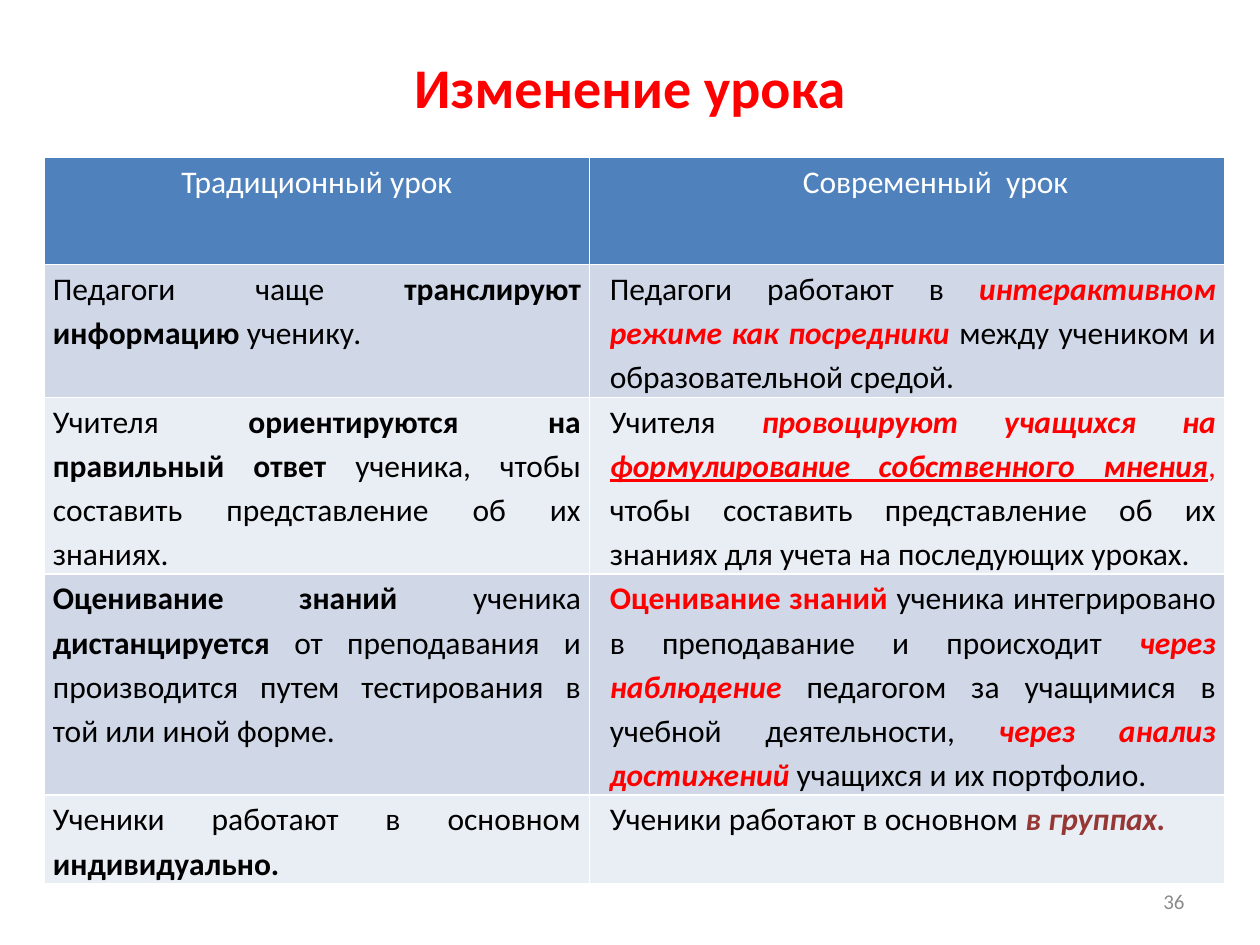
"""Builds a slide with a table comparing traditional and modern lessons."""
from dataclasses import dataclass

from pptx import Presentation
from pptx import util as u
from pptx.dml.color import RGBColor
from pptx.enum import text as t

HUES = {"red": "FF0000", "brown": "953735", "black": "000000", "white": "FFFFFF",
        "gray": "8C8C8C", "head": "4F81BD", "odd": "D0D8E8", "even": "E9EDF4"}
FONT = "Calibri"


@dataclass
class Run:
    text: str
    hue: str = "black"
    bold: bool = False
    slant: bool = False
    line: bool = False


def strong(words: str, hue: str = "black") -> Run:
    return Run(words, hue, bold=True)


def vivid(words: str, hue: str = "red", line: bool = False) -> Run:
    return Run(words, hue, bold=True, slant=True, line=line)


HEADS = ["Традиционный урок", "Современный  урок"]
ROWS = [
    ([Run("Педагоги чаще "), strong("транслируют информацию "), Run("ученику.")],
     [Run("Педагоги работают в "), vivid("интерактивном режиме как посредники "),
      Run("между учеником и образовательной средой.")]),
    ([Run("Учителя "), strong("ориентируются на правильный ответ "),
      Run("ученика, чтобы составить представление об их знаниях.")],
     [Run("Учителя "), vivid("провоцируют учащихся на "),
      vivid("формулирование собственного мнения", line=True), Run(",", "red"),
      Run(" чтобы составить представление об их знаниях для учета на последующих уроках.")]),
    ([strong("Оценивание знаний "), Run("ученика "), strong("дистанцируется"),
      Run(" от преподавания и производится путем тестирования в той или иной форме.")],
     [strong("Оценивание знаний ", "red"),
      Run("ученика интегрировано в преподавание и происходит "),
      vivid("через наблюдение "), Run("педагогом за учащимися в учебной деятельности, "),
      vivid("через анализ достижений"), Run(" учащихся и их портфолио.")]),
    ([Run("Ученики работают в основном "), strong("индивидуально.")],
     [Run("Ученики работают в основном "), vivid("в группах.", "brown")]),
]
WIDTHS = [4.33, 5.04]
HEIGHTS = [0.85, 0.98, 1.32, 1.65, 0.65]


def write(para, runs: list[Run], size: float, align, indent: float = 0) -> None:
    para.alignment = align
    if indent:
        props = para._p.get_or_add_pPr()
        props.set("marL", str(u.Inches(indent)))
        props.set("indent", "0")
    for item in runs:
        run = para.add_run()
        run.text = item.text
        font = run.font
        font.name, font.size = FONT, u.Pt(size)
        font.bold, font.italic = item.bold, item.slant
        font.underline = item.line
        font.color.rgb = RGBColor.from_string(HUES[item.hue])


def paint(cell, hue: str) -> None:
    cell.fill.solid()
    cell.fill.fore_color.rgb = RGBColor.from_string(HUES[hue])


def place(shape, left: float, top: float, width: float, height: float) -> None:
    shape.left, shape.top = u.Inches(left), u.Inches(top)
    shape.width, shape.height = u.Inches(width), u.Inches(height)


def draw_table(slide) -> None:
    table = slide.shapes.add_table(len(HEIGHTS), len(WIDTHS), u.Inches(0.35), u.Inches(1.25),
                                   u.Inches(sum(WIDTHS)), u.Inches(sum(HEIGHTS))).table
    for col, width in zip(table.columns, WIDTHS):
        col.width = u.Inches(width)
    for row, height in zip(table.rows, HEIGHTS):
        row.height = u.Inches(height)
    for x, head in enumerate(HEADS):
        cell = table.cell(0, x)
        paint(cell, "head")
        write(cell.text_frame.paragraphs[0], [Run(head, "white")], 18,
              t.PP_ALIGN.CENTER, 0.45 * x)
    for y, pair in enumerate(ROWS, 1):
        for x, runs in enumerate(pair):
            cell = table.cell(y, x)
            paint(cell, "odd" if y % 2 else "even")
            cell.margin_left = cell.margin_right = u.Inches(0.07)
            cell.margin_top = cell.margin_bottom = 0
            para = cell.text_frame.paragraphs[0]
            para.line_spacing = 1.15
            write(para, runs, 18, t.PP_ALIGN.JUSTIFY, 0.09 * x)


def main() -> None:
    deck = Presentation()
    deck.slide_width, deck.slide_height = u.Inches(10), u.Inches(7.5)
    slide = deck.slides.add_slide(deck.slide_layouts[5])
    title = slide.shapes.title
    place(title, 0.5, 0.3, 9, 0.77)
    title.text_frame.vertical_anchor = t.MSO_ANCHOR.MIDDLE
    write(title.text_frame.paragraphs[0], [strong("Изменение урока", "red")], 32,
          t.PP_ALIGN.CENTER)
    draw_table(slide)
    page = slide.shapes.add_textbox(0, 0, 0, 0)
    place(page, 7.17, 6.95, 2.33, 0.4)
    page.text_frame.word_wrap = True
    page.text_frame.vertical_anchor = t.MSO_ANCHOR.MIDDLE
    write(page.text_frame.paragraphs[0], [Run("36", "gray")], 12, t.PP_ALIGN.RIGHT)
    deck.save("out.pptx")


if __name__ == "__main__":
    main()
